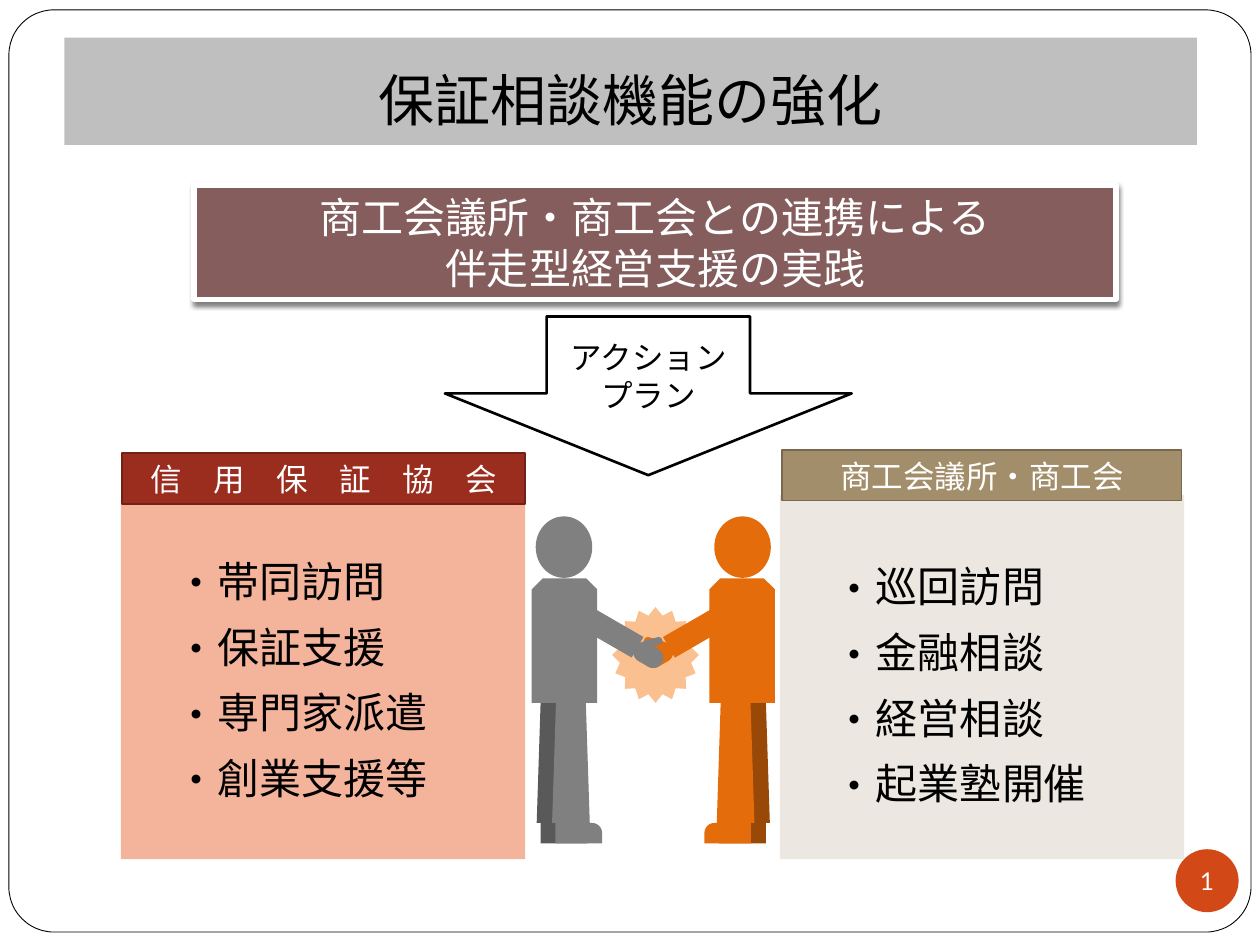
from lxml.etree import SubElement
from pptx import Presentation
from pptx.dml.color import RGBColor
from pptx.enum.shapes import MSO_SHAPE as Shape
from pptx.enum.text import MSO_ANCHOR as Anchor, PP_ALIGN as Align
from pptx.oxml.ns import qn
from pptx.util import Cm, Pt

rgb = RGBColor.from_string
CJK = "Noto Sans CJK JP"


def add_shape(shapes, kind, at, fill, line=None, width=1, adj=()):
    sp = shapes.add_shape(kind, *[Cm(v) for v in at])
    sp.shadow.inherit = False
    sp.fill.solid()
    sp.fill.fore_color.rgb = rgb(fill)
    if line:
        sp.line.color.rgb = rgb(line)
        sp.line.width = Pt(width)
    else:
        sp.line.fill.background()
    for i, value in enumerate(adj):
        sp.adjustments[i] = value
    return sp


def write(sp, lines, size, font, color, align=Align.CENTER, spacing=None, anchor=Anchor.MIDDLE):
    """Fill the shape with one paragraph per line and return its text frame."""
    tf = sp.text_frame
    tf.word_wrap = True
    tf.vertical_anchor = anchor
    for i, line in enumerate(lines):
        p = tf.paragraphs[0] if i == 0 else tf.add_paragraph()
        p.alignment = align
        if spacing:
            p.line_spacing = Pt(spacing)
        r = p.add_run()
        r.text = line
        r.font.size = Pt(size)
        r.font.color.rgb = rgb(color)
        r.font.name = font
        SubElement(r._r.get_or_add_rPr(), qn("a:ea"), typeface=CJK)
    return tf


prs = Presentation()
prs.slide_width, prs.slide_height = Cm(25.4), Cm(19.05)
s = prs.slides.add_slide(prs.slide_layouts[5])

# Frame behind everything, then the title band
frame = add_shape(s.shapes, Shape.ROUNDED_RECTANGLE, (0.18, 0.2, 25.04, 18.59),
                  "FFFFFF", "000000", 0.5, [0.049])
s.shapes._spTree.insert(2, frame._element)

title = s.shapes.title
title.left, title.top, title.width, title.height = Cm(1.3), Cm(0.76), Cm(22.83), Cm(2.16)
title.fill.solid()
title.fill.fore_color.rgb = rgb("BFBFBF")
tf = write(title, ["保証相談機能の強化"], 32, "Lato", "000000", spacing=39, anchor=Anchor.BOTTOM)
tf.margin_bottom = Cm(0.25)

# Banner with a soft shadow
banner = add_shape(s.shapes, Shape.RECTANGLE, (3.91, 3.73, 18.59, 2.31), "855D5D", "FFFFFF", 3)
write(banner, ["商工会議所・商工会との連携による", "伴走型経営支援の実践"],
      24, "Arial", "FFFFFF", spacing=29)
effects = banner._element.spPr.find(qn("a:effectLst"))
shadow = SubElement(effects, qn("a:outerShdw"), blurRad=str(Pt(3)), dist=str(Pt(2)),
                    dir="5400000", algn="ctr", rotWithShape="0")
SubElement(SubElement(shadow, qn("a:srgbClr"), val="000000"), qn("a:alpha"), val="50000")

arrow = add_shape(s.shapes, Shape.DOWN_ARROW, (8.97, 6.38, 8.2, 3.2),
                  "FFFFFF", "000000", 1.5, [0.5, 0.515])
write(arrow, ["アクションプラン"], 18, "Times New Roman", "000000", spacing=22)

# Slide number
badge = add_shape(s.shapes, Shape.OVAL, (23.7, 17.12, 1.27, 1.27), "D34817")
tf = write(badge, ["1"], 14, "Lato", "FFFFFF")
tf.word_wrap = False
tf.margin_left = tf.margin_right = tf.margin_top = tf.margin_bottom = 0
number = tf.paragraphs[0].runs[0]._r
number.tag = qn("a:fld")
number.set("id", "{B6F15528-21DE-4FAA-801E-634DDDAF4B2B}")
number.set("type", "slidenum")

# Partner panels: body, bottom margin, header
panels = [
    ((15.72, 9.98, 8.15, 7.34), "ECE8E1", 0.13,
     ["巡回訪問", "金融相談", "経営相談", "起業塾開催"],
     (15.77, 9.07, 8.05, 1.02), "A28E6A", "78694E", "商工会議所・商工会"),
    ((2.44, 10.08, 8.15, 7.24), "F4B39B", 0.45,
     ["帯同訪問", "保証支援", "専門家派遣", "創業支援等"],
     (2.46, 9.14, 8.13, 1.02), "9B2D1F", "732117", "信　用　保　証　協　会"),
]
for body_at, body_fill, bottom, items, head_at, head_fill, head_line, heading in panels:
    body = add_shape(s.shapes, Shape.RECTANGLE, body_at, body_fill)
    tf = write(body, items, 24, CJK, "000000", Align.LEFT, 37.5)
    tf.margin_bottom = Cm(bottom)
    for p in tf.paragraphs:
        pPr = p._p.get_or_add_pPr()
        pPr.set("marL", str(Cm(1.69)))
        pPr.set("indent", str(-Cm(0.85)))
        SubElement(pPr, qn("a:buFont"), typeface=CJK)
        SubElement(pPr, qn("a:buChar"), char="・")
    head = add_shape(s.shapes, Shape.RECTANGLE, head_at, head_fill, head_line)
    write(head, [heading], 18, "Times New Roman", "FFFFFF", spacing=22)

# Handshake: one figure, mirrored about the middle of the star
MIDDLE = 13.17
SHOE, LEG = (Shape.SNIP_ROUND_RECTANGLE, [0.5, 0]), (Shape.TRAPEZOID, [0.131])
HAND = (Shape.ROUNDED_RECTANGLE, [0.5])
figure = [  # (kind, adjustments), place, rotation, in shade
    (SHOE, (10.9, 16.59, 0.94, 0.41), 0, True),
    (LEG, (10.82, 13.54, 0.76, 3.05), 0, True),
    ((Shape.OVAL, []), (10.8, 10.41, 1.14, 1.24), 0, False),
    ((Shape.SNIP_2_SAME_RECTANGLE, []), (10.72, 11.66, 1.32, 2.51), 0, False),
    (HAND, (12.75, 13, 0.64, 0.41), 30, False),
    (HAND, (12.93, 12.88, 0.43, 0.15), -15, False),
    ((Shape.RECTANGLE, []), (11.1, 12.34, 1.88, 0.48), 30, False),
    (LEG, (11.13, 13.54, 0.76, 3.05), 0, False),
    (SHOE, (11.2, 16.59, 0.94, 0.41), 0, False),
]
handshake = s.shapes.add_group_shape()
add_shape(handshake.shapes, Shape.STAR_16_POINT, (12.34, 12.24, 1.75, 1.93), "FAC090", adj=[0.418])
for mirrored, color, shade in [(True, "E46C0A", "984807"), (False, "808080", "595959")]:
    for part, (x, y, w, h), angle, shaded in figure:
        kind, adj = part
        left = 2 * MIDDLE - x - w if mirrored else x
        sp = add_shape(handshake.shapes, kind, (left, y, w, h), shade if shaded else color, adj=adj)
        sp.rotation = -angle if mirrored else angle
        if part is SHOE and not mirrored:
            sp._element.spPr.xfrm.set("flipH", "1")

prs.save("out.pptx")
